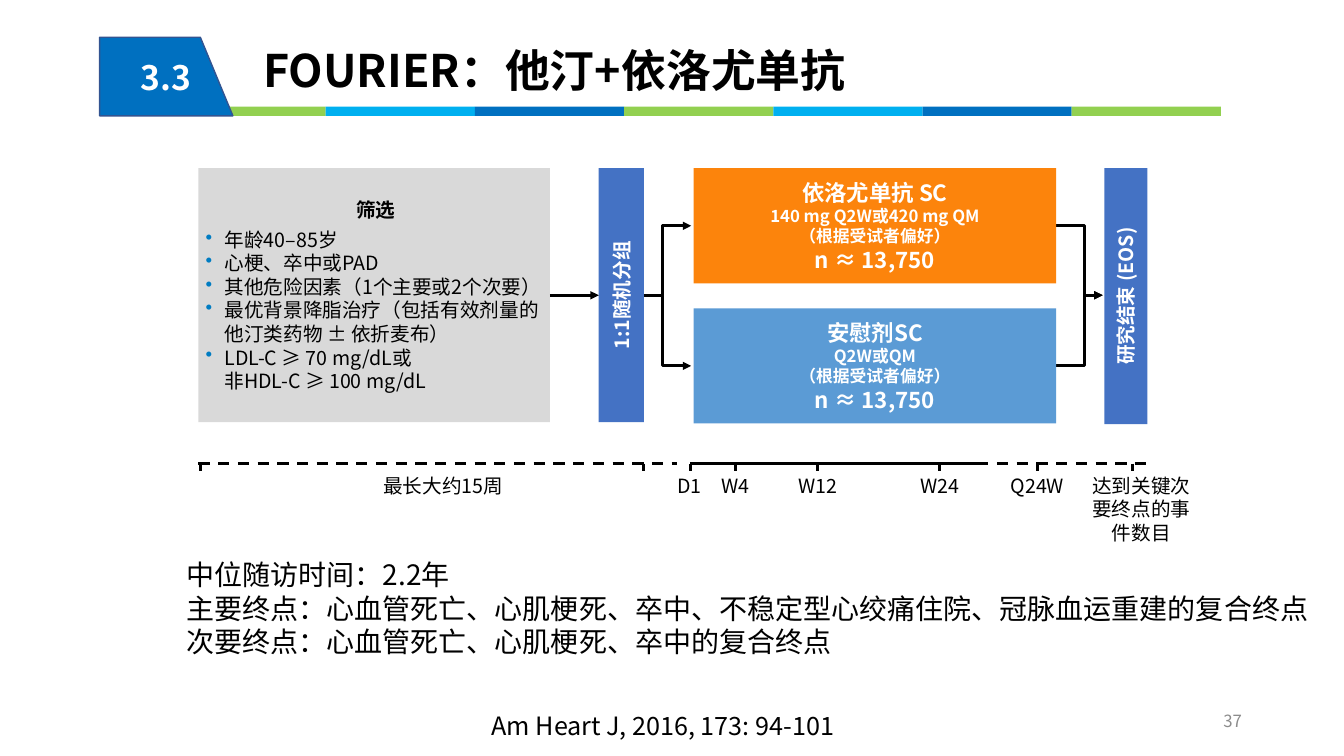
from dataclasses import dataclass

from lxml import etree
from pptx import Presentation
from pptx.dml.color import RGBColor
from pptx.enum.dml import MSO_LINE
from pptx.enum.shapes import MSO_CONNECTOR, MSO_SHAPE
from pptx.enum.text import MSO_ANCHOR, MSO_AUTO_SIZE, PP_ALIGN
from pptx.oxml.ns import qn
from pptx.util import Cm, Pt

LEFT, CENTER, RIGHT = PP_ALIGN.LEFT, PP_ALIGN.CENTER, PP_ALIGN.RIGHT
TOP, MIDDLE = MSO_ANCHOR.TOP, MSO_ANCHOR.MIDDLE
GROW, FIXED = MSO_AUTO_SIZE.SHAPE_TO_FIT_TEXT, MSO_AUTO_SIZE.NONE
STRAIGHT, RECT, DASH = MSO_CONNECTOR.STRAIGHT, MSO_SHAPE.RECTANGLE, MSO_LINE.DASH
INSETS = (0.25, 0.13, 0.25, 0.13)


@dataclass(frozen=True)
class Theme:
    """Colours, type sizes and font of the slide."""
    font: str = "Noto Sans CJK SC"
    black: str = "000000"
    white: str = "FFFFFF"
    muted: str = "8C8C8C"
    panel: str = "D9D9D9"
    green: str = "92D050"
    sky: str = "00B0F0"
    blue: str = "0070C0"
    edge: str = "325491"
    bullet: str = "007CC2"
    drug: str = "FC840C"
    placebo: str = "5B9BD5"
    pillar: str = "4472C4"
    title: int = 32
    badge: int = 24
    body: int = 20
    cite: int = 18
    head: int = 16
    label: int = 14
    small: int = 12
    leading: float = 1.2
    stroke: int = 2


class Painter:
    """Draws styled elements on one slide, with lengths in centimetres."""

    def __init__(self, slide, theme):
        self.shapes = slide.shapes
        self.theme = theme

    def letter(self, shape, lines, size, color, bold=False, align=LEFT,
               anchor=TOP, insets=INSETS, wrap=True):
        """Fill a shape with paragraphs of one style."""
        frame = shape.text_frame
        frame.word_wrap = wrap
        frame.vertical_anchor = anchor
        (frame.margin_left, frame.margin_top,
         frame.margin_right, frame.margin_bottom) = map(Cm, insets)
        for i, line in enumerate(lines):
            para = frame.add_paragraph() if i else frame.paragraphs[0]
            para.text = line
            para.alignment = align
            self.style(para, size, color, bold)
        return frame

    def style(self, para, size, color, bold=False):
        """Set font and line pitch of a paragraph."""
        para.line_spacing = Pt(size * self.theme.leading)
        font = para.font
        font.size, font.bold = Pt(size), bold
        font.color.rgb = RGBColor.from_string(color)
        font.name = self.theme.font
        props = para._p.pPr.find(qn("a:defRPr"))
        if props.find(qn("a:ea")) is None:
            etree.SubElement(props, qn("a:ea"), typeface=self.theme.font)

    def dot(self, para):
        """Give a paragraph a coloured bullet and a hanging indent."""
        props = para._p.get_or_add_pPr()
        props.set("marL", str(Cm(0.48)))
        props.set("indent", str(-Cm(0.48)))
        tint = etree.Element(qn("a:buClr"))
        etree.SubElement(tint, qn("a:srgbClr"), val=self.theme.bullet)
        mark = etree.Element(qn("a:buChar"), char="•")
        font = props.find(qn("a:defRPr"))
        font.addprevious(tint)
        font.addprevious(mark)

    def text(self, box, lines, size, color=None, grow=True, **style):
        """Add a text box."""
        shape = self.shapes.add_textbox(*map(Cm, box))
        frame = self.letter(shape, lines, size, color or self.theme.black, **style)
        frame.auto_size = GROW if grow else FIXED

    def rect(self, box, fill):
        """Add a plain rectangle."""
        shape = self.shapes.add_shape(RECT, *map(Cm, box))
        shape.shadow.inherit = False
        shape.fill.solid()
        shape.fill.fore_color.rgb = RGBColor.from_string(fill)
        shape.line.fill.background()
        return shape

    def pillar(self, box, label):
        """Add a tall rectangle whose text reads upwards."""
        shape = self.rect(box, self.theme.pillar)
        frame = self.letter(shape, [label], self.theme.label, self.theme.white,
                            bold=True, align=CENTER, anchor=MIDDLE, insets=(0,) * 4)
        frame._txBody.bodyPr.set("vert", "vert270")
        return shape

    def arm(self, box, fill, lines):
        """Add a treatment arm with larger first and last lines."""
        theme = self.theme
        frame = self.letter(self.rect(box, fill), lines, theme.small, theme.white,
                            bold=True, align=CENTER, anchor=MIDDLE, insets=(0.08,) * 4)
        for para in (frame.paragraphs[0], frame.paragraphs[-1]):
            self.style(para, theme.head, theme.white, True)

    def outline(self, points, close):
        """Add a freeform through the given points."""
        start, *rest = [(Cm(x), Cm(y)) for x, y in points]
        build = self.shapes.build_freeform(*start)
        build.add_line_segments(rest, close=close)
        shape = build.convert_to_shape()
        shape.shadow.inherit = False
        return shape

    def stroke(self, line, dash=False, arrow=False):
        """Style a black line."""
        line.width = Pt(self.theme.stroke)
        line.color.rgb = RGBColor.from_string(self.theme.black)
        if dash:
            line.dash_style = DASH
        if arrow:
            etree.SubElement(line._get_or_add_ln(), qn("a:tailEnd"), type="triangle")

    def bend(self, points):
        """Add an angled arrow."""
        shape = self.outline(points, False)
        shape.fill.background()
        self.stroke(shape.line, arrow=True)

    def line(self, start, end, **style):
        """Add a straight connector."""
        link = self.shapes.add_connector(STRAIGHT, *map(Cm, start + end))
        self.stroke(link.line, **style)
        etree.SubElement(link._element.spPr, qn("a:effectLst"))
        return link


def header(pen):
    """Draw the colour band, badge and title."""
    theme = pen.theme
    tints = (theme.green, theme.sky, theme.blue)
    for i in range(7):
        pen.rect((4.45 + 3.76 * i, 2.69, 3.76, 0.23), tints[i % 3])
    badge = pen.outline([(2.51, 0.94), (5.05, 0.94), (5.87, 2.92), (2.51, 2.92)], True)
    badge.fill.solid()
    badge.fill.fore_color.rgb = RGBColor.from_string(theme.blue)
    badge.line.color.rgb = RGBColor.from_string(theme.edge)
    badge.line.width = Pt(1)
    pen.letter(badge, ["3.3"], theme.badge, theme.white, bold=True,
               align=CENTER, anchor=MIDDLE)
    pen.text((6.38, 0.94, 22.48, 1.63), ["FOURIER：他汀+依洛尤单抗"], theme.title, bold=True)


def design(pen):
    """Draw the trial flow from screening to end of study."""
    theme = pen.theme
    top, mid, rows = 4.24, 7.44, (5.69, 9.22)
    for y in rows:
        pen.bend([(16.23, mid), (16.69, mid), (16.69, y), (17.42, y)])
        pen.bend([(26.57, y), (27.33, y), (27.33, mid), (27.79, mid)])
    screen = pen.rect((5, top, 8.86, 6.4), theme.panel)
    frame = pen.letter(screen, [
        "筛选", "年龄40–85岁", "心梗、卒中或PAD", "其他危险因素（1个主要或2个次要）",
        "最优背景降脂治疗（包括有效剂量的他汀类药物 ± 依折麦布）",
        "LDL-C ≥ 70 mg/dL或\n非HDL-C ≥ 100 mg/dL",
    ], theme.label, theme.black, anchor=MIDDLE, insets=(0.18, 0.13, 0.1, 0.13))
    head, *items = frame.paragraphs
    head.alignment, head.space_after, head.font.bold = CENTER, Pt(4.5), True
    for item in items:
        pen.dot(item)
    arms = (
        (theme.drug, ["依洛尤单抗 SC", "140 mg Q2W或420 mg QM", "（根据受试者偏好）", "n ≈ 13,750"]),
        (theme.placebo, ["安慰剂SC", "Q2W或QM", "（根据受试者偏好）", "n ≈ 13,750"]),
    )
    for y, (fill, lines) in zip(rows, arms):
        pen.arm((17.48, y - 1.45, 9.14, 2.9), fill, lines)
    split = pen.pillar((15.09, top, 1.14, 6.4), "1:1随机分组")
    pen.pillar((27.83, top, 1.09, 6.45), "研究结束 (EOS)")
    link = pen.line((13.86, mid), (15.09, mid), arrow=True)
    link.begin_connect(screen, 3)
    link.end_connect(split, 1)


def timeline(pen):
    """Draw the visit axis, its ticks and labels."""
    axis = 11.68
    for start, end, dash in ((5, 17.07, True), (24.13, 28.91, True), (17.4, 24.64, False)):
        pen.line((start, axis), (end, axis), dash=dash)
    for x in (5.05, 16.21, 17.4, 18.54, 20.6, 23.67, 26.14, 28.55):
        pen.line((x, axis), (x, axis + 0.2))
    labels = (
        (6.3, 9.75, "最长大约15周", CENTER), (16.97, 0.91, "D1", LEFT),
        (18.08, 1.02, "W4", LEFT), (20.02, 1.27, "W12", LEFT),
        (23.09, 1.27, "W24", LEFT), (25.37, 1.65, "Q24W", LEFT),
        (27.33, 2.87, "达到关键次要终点的事件数目", CENTER),
    )
    for x, width, label, align in labels:
        pen.text((x, 11.84, width, 0.79), [label], pen.theme.label,
                 align=align, insets=(0.1,) * 4)


def footer(pen):
    """Add the endpoints, citation and page number."""
    theme = pen.theme
    pen.text((4.45, 13.92, 29.01, 2.82), [
        "中位随访时间：2.2年",
        "主要终点：心血管死亡、心肌梗死、卒中、不稳定型心绞痛住院、冠脉血运重建的复合终点",
        "次要终点：心血管死亡、心肌梗死、卒中的复合终点",
    ], theme.body, wrap=False)
    pen.text((12.14, 17.78, 9.65, 1.02), ["Am Heart J, 2016, 173: 94-101"],
             theme.cite, wrap=False)
    pen.text((23.93, 17.65, 7.62, 1.02), ["37"], theme.small, theme.muted,
             grow=False, align=RIGHT, anchor=MIDDLE)


def main():
    """Build and save the deck."""
    deck = Presentation()
    deck.slide_width, deck.slide_height = Cm(33.87), Cm(19.05)
    pen = Painter(deck.slides.add_slide(deck.slide_layouts[6]), Theme())
    for draw in (header, design, timeline, footer):
        draw(pen)
    deck.save("out.pptx")


if __name__ == "__main__":
    main()
